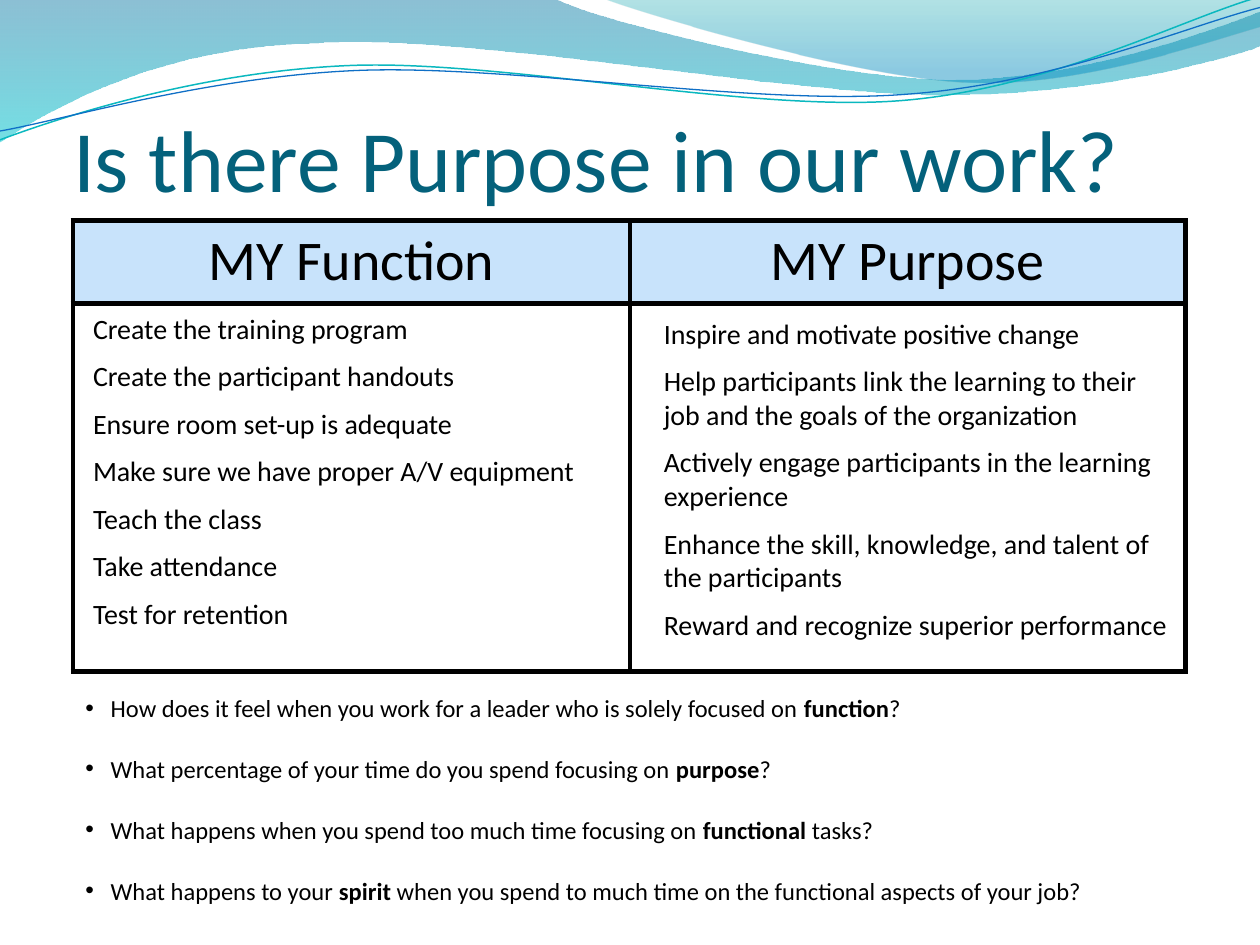
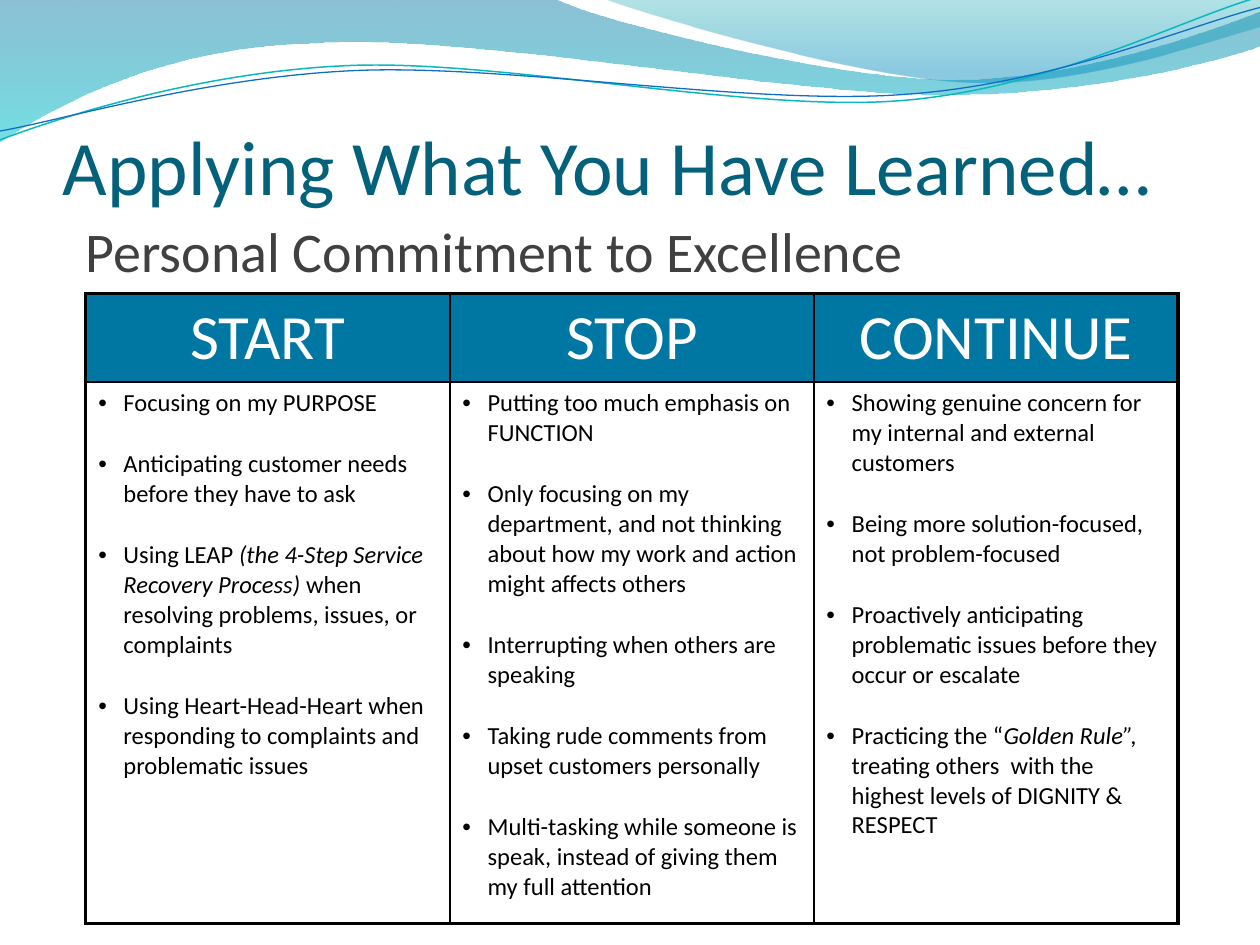
import math

import lxml.etree
import pptx
import pptx.dml.color
import pptx.enum.text
import pptx.oxml.ns
import pptx.util

Inches = pptx.util.Inches
Pt = pptx.util.Pt
RGBColor = pptx.dml.color.RGBColor
ALIGN = pptx.enum.text.PP_ALIGN
ANCHOR = pptx.enum.text.MSO_ANCHOR
qn = pptx.oxml.ns.qn

FONT = "Calibri"
BLACK = RGBColor(0x00, 0x00, 0x00)
WHITE = RGBColor(0xFF, 0xFF, 0xFF)
GREY = RGBColor(0x40, 0x40, 0x40)
TITLE_TEAL = RGBColor(0x04, 0x61, 0x7B)
PALE_BLUE = RGBColor(0xC8, 0xE3, 0xFB)
HEADER_BLUE = RGBColor(0x00, 0x76, 0xA3)
DEEP_BLUE = RGBColor(0x00, 0x74, 0xA1)
AQUA = RGBColor(0x00, 0xC6, 0xCF)
SEA_GREEN = RGBColor(0x00, 0xA1, 0xA9)
SKY_BLUE = RGBColor(0x00, 0x8B, 0xBF)
LINE_AQUA = RGBColor(0x0A, 0xB8, 0xBF)
LINE_BLUE = RGBColor(0x0F, 0x6F, 0xC6)

# Outlines in inches: one point is a straight step, three points a Bezier curve.
# Gradient stops are (position, colour, opacity in percent).
WAVE_BANDS = [
    ([[(0, 0)], [(4.4, -0.01)],
      [(4.76, 0.17), (6.64, 0.63), (7.58, 0.63)],
      [(8.53, 0.63), (9.58, 0.26), (10, 0.09)], [(10.01, 0.36)],
      [(9.83, 0.44), (8.7, 0.76), (7.46, 0.75)],
      [(6.22, 0.75), (3.82, 0.28), (2.57, 0.34)],
      [(1.29, 0.36), (0.46, 0.83), (-0.01, 1.13)], [(0, 0)]],
     [(0, DEEP_BLUE, 45), (1, AQUA, 55)]),
    ([[(4.79, -0.01)],
      [(5.09, 0.11), (6.82, 0.62), (7.69, 0.65)],
      [(8.56, 0.69), (9.61, 0.32), (10, 0.21)], [(10, 0)], [(4.79, -0.01)]],
     [(0, SEA_GREEN, 30), (0.8, SKY_BLUE, 45)]),
]
# Each line is tilted about its own centre.
WAVE_TILT = -2.7
WAVE_LINES = [
    ([[(0, 1.11)],
      [(0.48, 0.93), (1.58, 0.57), (2.77, 0.52)],
      [(3.95, 0.47), (5.93, 0.89), (7.13, 0.8)],
      [(8.33, 0.71), (9.38, 0.15), (9.98, -0.02)]], (4.99, 0.58), LINE_AQUA, 0.85),
    ([[(0, 1.04)],
      [(0.47, 0.96), (1.64, 0.61), (2.83, 0.56)],
      [(4.03, 0.51), (5.97, 0.84), (7.17, 0.75)],
      [(8.36, 0.67), (9.41, 0.21), (10, 0.06)]], (5, 0.59), LINE_BLUE, 0.75),
]


def turn(point, centre, degrees):
    """Turn a point clockwise about a centre."""
    sin, cos = math.sin(math.radians(degrees)), math.cos(math.radians(degrees))
    dx, dy = point[0] - centre[0], point[1] - centre[1]
    return centre[0] + dx * cos - dy * sin, centre[1] + dx * sin + dy * cos


def write(tf, text, size=14, color=BLACK, align=ALIGN.LEFT, before=0, after=0,
          bullet=False, emphasis="bold"):
    """Write one paragraph per line; parts between asterisks get the emphasis."""
    for i, line in enumerate(text.split("\n")):
        p = tf.paragraphs[0] if i == 0 else tf.add_paragraph()
        p.alignment = align
        p.space_before, p.space_after = Pt(before), Pt(after)
        if bullet:
            pPr = p._p.get_or_add_pPr()
            pPr.set("marL", str(Inches(0.2)))
            pPr.set("indent", str(Inches(-0.2)))
            lxml.etree.SubElement(pPr, qn("a:buFont")).set("typeface", "Arial")
            lxml.etree.SubElement(pPr, qn("a:buChar")).set("char", "•")
        for k, part in enumerate(line.split("*")):
            if not part:
                continue
            r = p.add_run()
            r.text = part
            r.font.name, r.font.size = FONT, Pt(size)
            r.font.color.rgb = color
            if k % 2:
                setattr(r.font, emphasis, True)


class Deck:
    """The shared style and the slide being built."""

    def __init__(self):
        self.prs = pptx.Presentation()
        self.prs.slide_width, self.prs.slide_height = Inches(10), Inches(7.5)
        self.s = None

    def slide(self, title, left, top, height, size):
        self.s = self.prs.slides.add_slide(self.prs.slide_layouts[6])
        for steps, stops in WAVE_BANDS:
            self.band(steps, stops)
        for steps, centre, color, width in WAVE_LINES:
            self.curve(steps, centre, color, width)
        tf = self.text(title, left, top, 9, height, size=size, color=TITLE_TEAL)
        tf.vertical_anchor = ANCHOR.BOTTOM
        tf.margin_left = tf.margin_right = tf.margin_bottom = 0

    def outline(self, steps, close):
        points = [(Inches(x), Inches(y)) for step in steps for x, y in step]
        fb = self.s.shapes.build_freeform(*points[0], scale=1.0)
        fb.add_line_segments(points[1:], close=close)
        sp = fb.convert_to_shape()
        sp.shadow.inherit = False
        # Join each run of three segments into one Bezier curve
        segments = iter(list(sp.element.iter(qn("a:lnTo"))))
        for step in steps[1:]:
            first, *others = [next(segments) for _ in step]
            if others:
                first.tag = qn("a:cubicBezTo")
            for other in others:
                first.append(other[0])
                other.getparent().remove(other)
        return sp

    def band(self, steps, stops):
        sp = self.outline(steps, close=True)
        sp.line.fill.background()
        sp.fill.gradient()
        sp.fill.gradient_angle = 270
        for stop, (position, color, _) in zip(sp.fill.gradient_stops, stops):
            stop.position, stop.color.rgb = position, color
        for clr, (_, _, opacity) in zip(sp.element.iter(qn("a:srgbClr")), stops):
            lxml.etree.SubElement(clr, qn("a:alpha")).set("val", str(opacity * 1000))

    def curve(self, steps, centre, color, width):
        level = [[turn(point, centre, -WAVE_TILT) for point in step] for step in steps]
        sp = self.outline(level, close=False)
        sp.rotation = WAVE_TILT
        sp.fill.background()
        sp.line.color.rgb, sp.line.width = color, Pt(width)

    def text(self, text, left, top, width, height, **style):
        sp = self.s.shapes.add_textbox(Inches(left), Inches(top),
                                       Inches(width), Inches(height))
        tf = sp.text_frame
        tf.word_wrap = True
        write(tf, text, **style)
        return tf

    def table(self, heads, bodies, left, top, widths, heights, head_fill, head_style,
              outer, inner):
        cols = len(heads)
        tbl = self.s.shapes.add_table(2, cols, Inches(left), Inches(top),
                                      Inches(sum(widths)), Inches(sum(heights))).table
        tbl.first_row = tbl.horz_banding = False
        for col, width in zip(tbl.columns, widths):
            col.width = Inches(width)
        for row, height in zip(tbl.rows, heights):
            row.height = Inches(height)
        for c in range(cols):
            head, body = tbl.cell(0, c), tbl.cell(1, c)
            left_w = outer if c == 0 else inner
            right_w = outer if c == cols - 1 else inner
            self.borders(head, L=left_w, R=right_w, T=outer, B=inner)
            self.borders(body, L=left_w, R=right_w, T=inner, B=outer)
            head.fill.solid()
            head.fill.fore_color.rgb = head_fill
            body.fill.background()
            write(head.text_frame, heads[c], align=ALIGN.CENTER, **head_style)
            if bodies:
                write(body.text_frame, bodies[c], emphasis="italic", **BULLETS)

    def borders(self, cell, **widths):
        tcPr = cell._tc.get_or_add_tcPr()
        for side, width in widths.items():
            ln = lxml.etree.SubElement(tcPr, qn("a:ln" + side), w=str(Pt(width)))
            fill = lxml.etree.SubElement(ln, qn("a:solidFill"))
            lxml.etree.SubElement(fill, qn("a:srgbClr")).set("val", str(BLACK))


BULLETS = dict(size=14, before=6, after=12, bullet=True)
STATEMENTS = dict(size=16, before=4, after=4)

FUNCTIONS = """Create the training program
Create the participant handouts
Ensure room set-up is adequate
Make sure we have proper A/V equipment
Teach the class
Take attendance
Test for retention"""

PURPOSES = """Inspire and motivate positive change
Help participants link the learning to their job and the goals of the organization
Actively engage participants in the learning experience
Enhance the skill, knowledge, and talent of the participants
Reward and recognize superior performance"""

QUESTIONS = """How does it feel when you work for a leader who is solely focused on *function*?
What percentage of your time do you spend focusing on *purpose*?
What happens when you spend too much time focusing on *functional* tasks?
What happens to your *spirit *when you spend to much time on the functional aspects of your job?"""

START = """Focusing on my PURPOSE
Anticipating customer needs before they have to ask
Using LEAP *(the 4-Step Service Recovery Process) *when resolving problems, issues, or complaints
Using Heart-Head-Heart when responding to complaints and problematic issues"""

STOP = """Putting too much emphasis on FUNCTION
Only focusing on my department, and not thinking about how my work and action might affects others
Interrupting when others are speaking
Taking rude comments from upset customers personally
Multi-tasking while someone is speak, instead of giving them my full attention"""

CONTINUE = """Showing genuine concern for my internal and external customers
Being more solution-focused, not problem-focused
Proactively anticipating problematic issues before they  occur or escalate
Practicing the “*Golden Rule”, *treating others  with the highest levels of DIGNITY & RESPECT"""


def main():
    deck = Deck()

    # Function against purpose
    deck.slide("Is there Purpose in our work?", 0.58, 0.75, 0.92, size=50)
    deck.table(["MY Function", "MY Purpose"], None, 0.58, 1.75, (4.42, 4.41),
               (0.66, 2.92), PALE_BLUE, dict(size=32), outer=3, inner=3)
    deck.text(QUESTIONS, 0.58, 5.45, 8.18, 1.8, **BULLETS)
    deck.text(FUNCTIONS, 0.64, 2.42, 4.07, 2.79, **STATEMENTS)
    deck.text(PURPOSES, 5.17, 2.46, 4.25, 2.79, **STATEMENTS)

    # Personal commitments
    deck.slide("Applying What You Have Learned…", 0.5, 0.42, 1.25, size=44)
    deck.text("Personal Commitment to Excellence", 0.58, 1.67, 6.76, 0.64,
              size=32, color=GREY)
    deck.table(["START", "STOP", "CONTINUE"], [START, STOP, CONTINUE],
               0.68, 2.33, [2.89] * 3, (0.7, 4.3),
               HEADER_BLUE, dict(size=36, color=WHITE), outer=2.25, inner=1)

    deck.prs.save("out.pptx")


if __name__ == "__main__":
    main()
